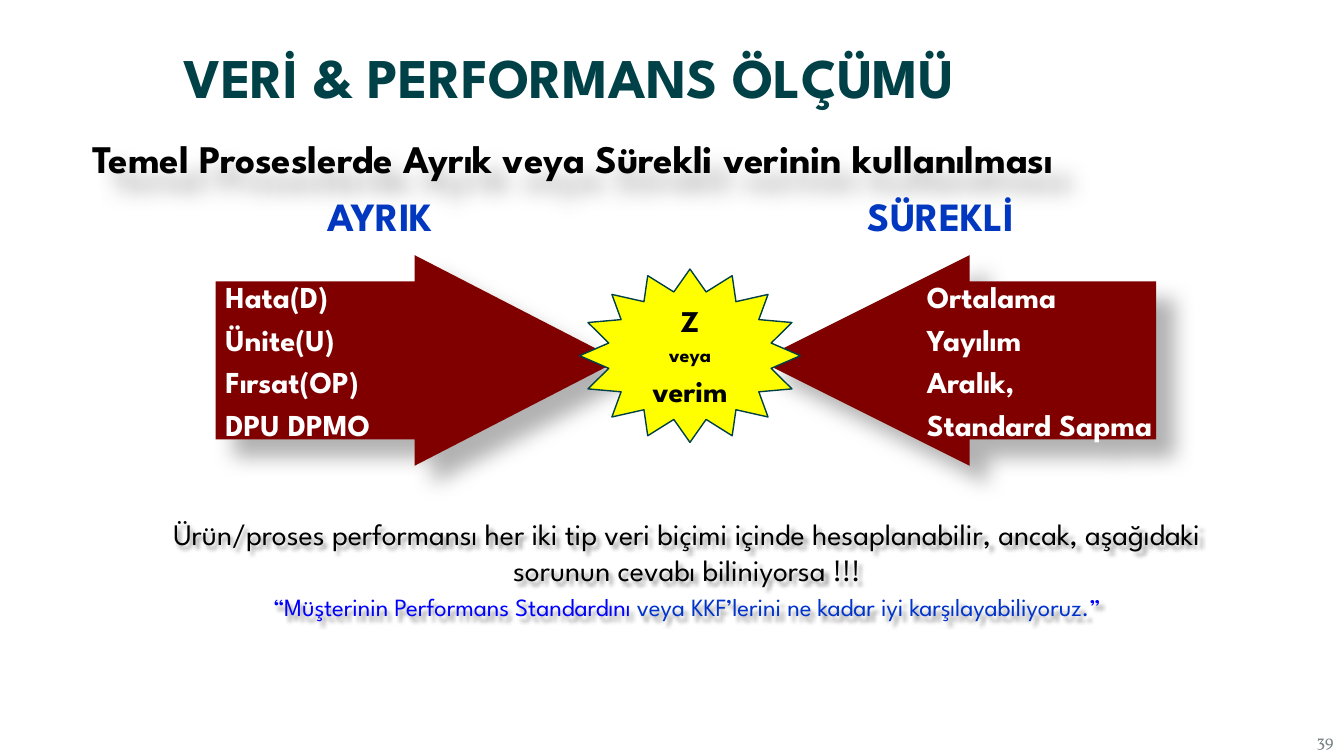
from lxml import etree
from pptx import Presentation
from pptx.dml.color import RGBColor
from pptx.enum import shapes, text
from pptx.oxml import ns
from pptx.util import Pt

MAROON = RGBColor(0x80, 0x00, 0x00)
YELLOW = RGBColor(0xFF, 0xFF, 0x00)
TEAL = RGBColor(0x00, 0x40, 0x47)
LABEL_BLUE = RGBColor(0x02, 0x38, 0xC0)
PURE_BLUE = RGBColor(0x00, 0x00, 0xFF)
DEEP_BLUE = RGBColor(0x00, 0x33, 0xCC)
BLACK = RGBColor(0x00, 0x00, 0x00)
WHITE = RGBColor(0xFF, 0xFF, 0xFF)
GREY = RGBColor(0x79, 0x82, 0x85)

FONT = "League Spartan"
LEFT, CENTER, RIGHT = text.PP_ALIGN.LEFT, text.PP_ALIGN.CENTER, text.PP_ALIGN.RIGHT
TOP, MIDDLE = text.MSO_ANCHOR.TOP, text.MSO_ANCHOR.MIDDLE
LINE_GAP = 0.2


def place(sp, box):
    for name, value in zip(("left", "top", "width", "height"), box):
        setattr(sp, name, Pt(value))


def add_shadow(sp, blur, dist, alpha):
    sp.shadow.inherit = False
    effects = sp._element.spPr.find(ns.qn("a:effectLst"))
    shadow = etree.SubElement(effects, ns.qn("a:outerShdw"), blurRad=str(Pt(blur)),
                              dist=str(Pt(dist)), dir="2700000", algn="tl", rotWithShape="0")
    color = etree.SubElement(shadow, ns.qn("a:srgbClr"), val="000000")
    etree.SubElement(color, ns.qn("a:alpha"), val=str(alpha * 1000))


def format_frame(tf, anchor=TOP, wrap=True, insets=(7.2, 3.6, 7.2, 3.6)):
    tf.auto_size = text.MSO_AUTO_SIZE.NONE
    tf.word_wrap = wrap
    tf.vertical_anchor = anchor
    for side, value in zip(("left", "top", "right", "bottom"), insets):
        setattr(tf, "margin_" + side, Pt(value))


def write(tf, paragraphs, align=LEFT, font=FONT, bold=True):
    for i, runs in enumerate(paragraphs):
        p = tf.add_paragraph() if i else tf.paragraphs[0]
        p.alignment = align
        p.space_before = Pt(round(runs[0][1] * LINE_GAP, 1) if i else 0)
        for words, size, color in runs:
            r = p.add_run()
            r.text = words
            for key, value in {"name": font, "size": Pt(size), "bold": bold}.items():
                setattr(r.font, key, value)
            r.font.color.rgb = color


def add_figure(s, kind, box, adjustments, fill=None, line=None):
    sp = s.shapes.add_shape(kind, *map(Pt, box))
    sp.shadow.inherit = False
    for i, value in enumerate(adjustments):
        sp.adjustments[i] = value
    if fill is None:
        sp.fill.background()
    else:
        sp.fill.solid()
        sp.fill.fore_color.rgb = fill
    if line is None:
        sp.line.fill.background()
    else:
        sp.line.color.rgb = line
        sp.line.width = Pt(1)
    return sp


def add_arrow(s, kind, box, head, lines):
    sp = add_figure(s, kind, box, (0.75, head), MAROON)
    add_shadow(sp, 15, 18, 30)
    format_frame(sp.text_frame, MIDDLE, True, (7, 3.6, 0, 3.6))
    write(sp.text_frame, [[(line, 21.7, WHITE)] for line in lines])


def add_star(s):
    sp = add_figure(s, shapes.MSO_SHAPE.STAR_16_POINT, (414, 192.2, 157.7, 123.8),
                    (0.375,), YELLOW, TEAL)
    format_frame(sp.text_frame, MIDDLE, False, (7.9, 3.6, 7.9, 3.6))
    write(sp.text_frame, [[("Z", 21.5, BLACK)], [("veya", 14.3, BLACK)],
                          [("verim", 21.5, BLACK)]], CENTER)


def add_conclusion(s):
    sp = add_figure(s, shapes.MSO_SHAPE.ROUNDED_RECTANGLE, (110.9, 361.4, 759.6, 92.2), (0.125,))
    add_shadow(sp, 3, 3, 40)
    format_frame(sp.text_frame, insets=(4, 3.6, 4, 3.6))
    write(sp.text_frame, [
        [("Ürün/proses performansı her iki tip veri biçimi içinde hesaplanabilir, ancak, "
          "aşağıdaki sorunun cevabı biliniyorsa !!!", 21.3, BLACK)],
        [("“Müşterinin Performans Standardını ", 17.7, PURE_BLUE),
         ("veya KKF’lerini ne kadar iyi karşılayabiliyoruz.", 17.7, DEEP_BLUE),
         ("”", 17.7, PURE_BLUE)],
    ], CENTER, bold=False)


def add_text(s, box, words, size, color, **style):
    sp = s.shapes.add_textbox(*map(Pt, box))
    format_frame(sp.text_frame, MIDDLE, insets=(7.2, 2, 7.2, 3.6))
    write(sp.text_frame, [[(words, size, color)]], **style)
    return sp


def add_labels(s):
    sp = add_text(s, (226.8, 133.2, 509.8, 42.5), "AYRIK\tSÜREKLİ", 28.6, LABEL_BLUE)
    pPr = sp.text_frame.paragraphs[0]._p.get_or_add_pPr()
    tabs = etree.SubElement(pPr, ns.qn("a:tabLst"))
    etree.SubElement(tabs, ns.qn("a:tab"), pos=str(Pt(386)), algn="l")


def fill_title(s):
    sp = s.shapes.title
    place(sp, (123.8, 26.6, 864, 50.4))
    format_frame(sp.text_frame)
    write(sp.text_frame, [[("VERİ & PERFORMANS ÖLÇÜMÜ", 40, TEAL)]])


def fill_subtitle(s):
    sp = s.placeholders[1]
    place(sp, (58.3, 103, 864, 52.6))
    add_shadow(sp, 15, 18, 30)
    format_frame(sp.text_frame, MIDDLE, insets=(7.6, 3.6, 7.2, 36.4))
    pPr = sp.text_frame.paragraphs[0]._p.get_or_add_pPr()
    pPr.set("marL", "0")
    pPr.set("indent", "0")
    etree.SubElement(pPr, ns.qn("a:buNone"))
    write(sp.text_frame, [[("Temel Proseslerde Ayrık veya Sürekli verinin kullanılması", 27.9, BLACK)]])


def main():
    prs = Presentation()
    prs.slide_width, prs.slide_height = Pt(960), Pt(540)
    s = prs.slides.add_slide(prs.slide_layouts[1])
    fill_title(s)
    fill_subtitle(s)
    add_arrow(s, shapes.MSO_SHAPE.RIGHT_ARROW, (154.1, 182.2, 288, 150.5), 0.97,
              ("Hata(D)", "Ünite(U)", "Fırsat(OP)", "DPU DPMO"))
    add_arrow(s, shapes.MSO_SHAPE.LEFT_ARROW, (542.2, 182.2, 283.7, 150.5), 1,
              ("Ortalama", "Yayılım", "Aralık,", "Standard Sapma"))
    add_star(s)
    add_conclusion(s)
    add_labels(s)
    add_text(s, (893.5, 518.4, 66.2, 22.3), "39", 12, GREY, align=RIGHT, font="Vollkorn", bold=False)
    prs.save("out.pptx")


if __name__ == "__main__":
    main()
